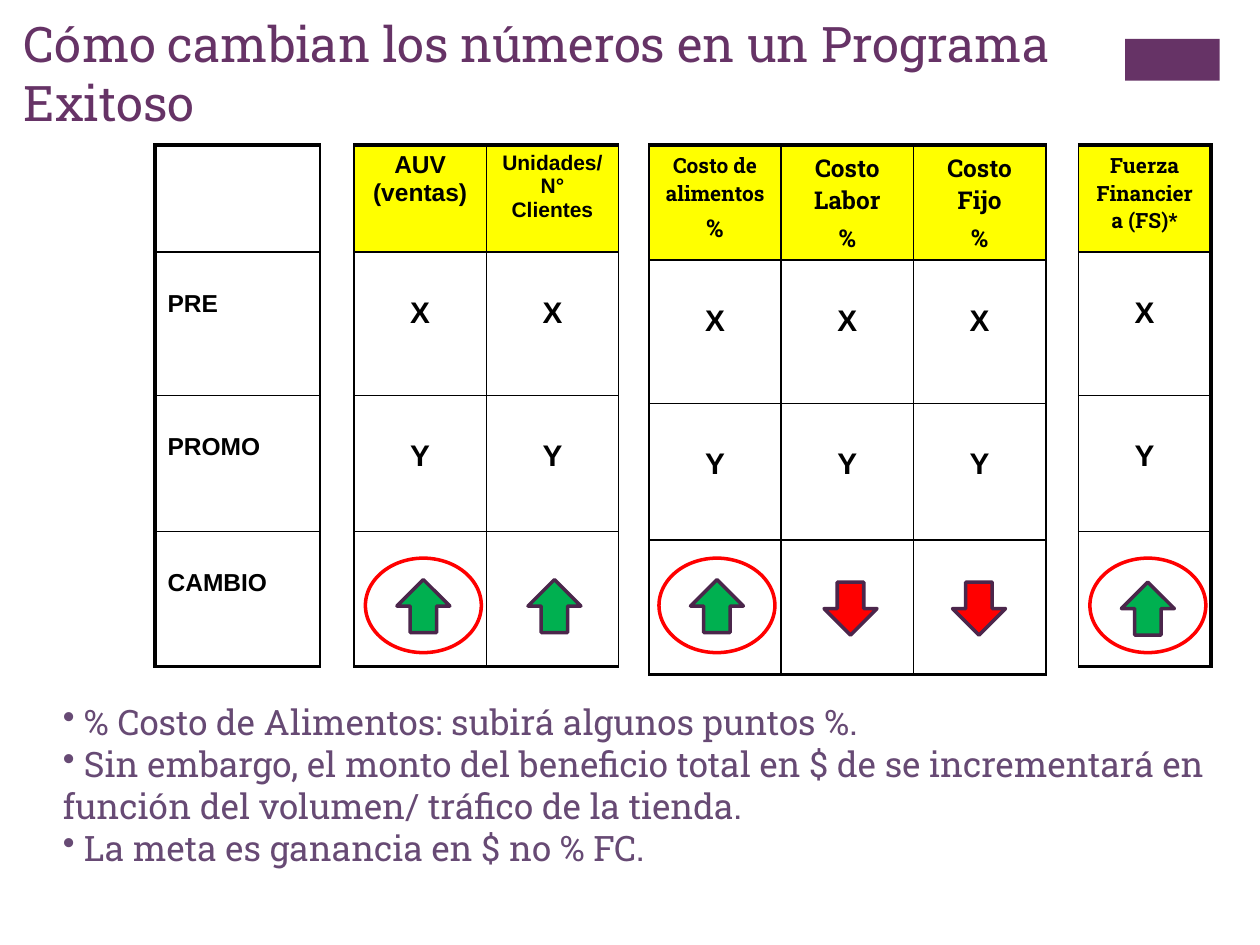
from lxml import etree
from pptx import Presentation
from pptx.dml.color import RGBColor
from pptx.enum.shapes import MSO_SHAPE
from pptx.enum.text import MSO_ANCHOR, MSO_AUTO_SIZE, PP_ALIGN
from pptx.oxml.ns import qn
from pptx.util import Inches, Pt

UP, DOWN = MSO_SHAPE.UP_ARROW, MSO_SHAPE.DOWN_ARROW
RECTANGLE, OVAL = MSO_SHAPE.RECTANGLE, MSO_SHAPE.OVAL
TOP, NO_FIT = MSO_ANCHOR.TOP, MSO_AUTO_SIZE.NONE
LEFT, CENTER = PP_ALIGN.LEFT, PP_ALIGN.CENTER
SANS, SLAB = "Arial", "Roboto Slab"

COLORS = {
    "title": "663366", "body": "674A74", "text": "000000", "header": "FFFF00",
    "rise": "00B050", "fall": "FF0000", "outline": "4B264B", "ring": "FF0000",
}

TITLE = "Cómo cambian los números en un Programa Exitoso"
BULLETS = [
    " % Costo de Alimentos: subirá algunos puntos %.",
    " Sin embargo, el monto del beneficio total en $ de se incrementará en "
    "función del volumen/ tráfico de la tienda.",
    " La meta es ganancia en $ no % FC.",
]
LABELS = ["PRE", "PROMO", "CAMBIO"]
VALUES = ["X", "Y", ""]
ROW_HEIGHTS = [0.85, 1.14, 1.08, 1.07]
TABLE_TOP, LABEL_WIDTH, VALUE_WIDTH = 1.15, 1.31, 1.05
THIN, THICK = 1, 2.25

LABEL_LEFT = 1.23
GROUPS = [
    (2.81, [([("AUV (ventas)", 14)], SANS, 0),
            ([("Unidades/", 12), ("N° Clientes", 12)], SANS, 0)]),
    (5.15, [([("Costo de alimentos", 12), ("%", 14)], SLAB, 2.8),
            ([("Costo Labor", 14), ("%", 14)], SLAB, 2.8),
            ([("Costo Fijo", 14), ("%", 14)], SLAB, 2.8)]),
    (8.56, [([("Fuerza Financiera (FS)*", 12)], SLAB, 0)]),
]

ARROW_SIZE = 0.42
ARROWS = [
    (UP, 3.15, 4.6, True), (UP, 4.19, 4.6, False), (UP, 5.48, 4.6, True),
    (DOWN, 6.54, 4.62, False), (DOWN, 7.56, 4.62, False), (UP, 8.9, 4.62, True),
]
RING_TOP, RING_WIDTH, RING_HEIGHT = 4.43, 0.92, 0.75


def color(name):
    return RGBColor.from_string(COLORS[name])


def style(paragraph, size, font, color_name, bold=False, align=LEFT):
    paragraph.alignment = align
    paragraph.font.size = Pt(size)
    paragraph.font.name = font
    paragraph.font.bold = bold
    paragraph.font.color.rgb = color(color_name)


def fill_paragraphs(frame, lines, font, color_name, bold, align, gap=0):
    for index, (text, size) in enumerate(lines):
        paragraph = frame.add_paragraph() if index else frame.paragraphs[0]
        paragraph.text = text
        style(paragraph, size, font, color_name, bold, align)
        paragraph.space_before = Pt(gap if index else 0)


def set_borders(cell, widths):
    properties = cell._tc.get_or_add_tcPr()
    for index, (side, width) in enumerate(zip("LRTB", widths)):
        line = etree.Element(qn(f"a:ln{side}"), w=str(Pt(width)))
        solid = etree.SubElement(line, qn("a:solidFill"))
        etree.SubElement(solid, qn("a:srgbClr"), val=COLORS["text"])
        properties.insert(index, line)


def add_grid(slide, left, column_width, columns, thick_left, thick_right):
    count, last_row = len(columns), len(ROW_HEIGHTS) - 1
    frame = slide.shapes.add_table(
        len(ROW_HEIGHTS), count, Inches(left), Inches(TABLE_TOP),
        Inches(column_width * count), Inches(sum(ROW_HEIGHTS)))
    table = frame.table
    table.first_row = table.horz_banding = False
    for row, height in zip(table.rows, ROW_HEIGHTS):
        row.height = Inches(height)
    for c, cells in enumerate(columns):
        table.columns[c].width = Inches(column_width)
        for r, (lines, font, gap, margin, align) in enumerate(cells):
            cell = table.cell(r, c)
            cell.margin_top = Inches(margin)
            fill_paragraphs(cell.text_frame, lines, font, "text", True, align, gap)
            if r == 0 and lines:
                cell.fill.solid()
                cell.fill.fore_color.rgb = color("header")
            else:
                cell.fill.background()
            heavy = (thick_left and c == 0, thick_right and c == count - 1,
                     r == 0, r == last_row)
            set_borders(cell, [THICK if side else THIN for side in heavy])


def add_shape(slide, kind, left, top, width, height, fill=None, line=None):
    shape = slide.shapes.add_shape(
        kind, Inches(left), Inches(top), Inches(width), Inches(height))
    shape.shadow.inherit = False
    if fill:
        shape.fill.solid()
        shape.fill.fore_color.rgb = color(fill)
    else:
        shape.fill.background()
    if line:
        shape.line.color.rgb = color(line)
        shape.line.width = Pt(2)
    else:
        shape.line.fill.background()


def main():
    deck = Presentation()
    deck.slide_width, deck.slide_height = Inches(10), Inches(7.5)
    slide = deck.slides.add_slide(deck.slide_layouts[5])

    title = slide.shapes.title
    title.left, title.top = Inches(0.09), Inches(0.06)
    title.width, title.height = Inches(8.49), Inches(1.22)
    title.text_frame.auto_size = NO_FIT
    title.text_frame.vertical_anchor = TOP
    fill_paragraphs(title.text_frame, [(TITLE, 28)], SLAB, "title", False, LEFT)

    add_shape(slide, RECTANGLE, 8.93, 0.31, 0.75, 0.33, "title")

    labels = [([], SANS, 0, 0.05, LEFT)]
    labels += [([(label, 14)], SANS, 0, 0.3, LEFT) for label in LABELS]
    add_grid(slide, LABEL_LEFT, LABEL_WIDTH, [labels], True, False)
    values = [([(value, 17)] if value else [], SANS, 0, 0.35, CENTER)
              for value in VALUES]
    for left, headers in GROUPS:
        columns = [[(lines, font, gap, 0.05, CENTER)] + values
                   for lines, font, gap in headers]
        add_grid(slide, left, VALUE_WIDTH, columns, False, left == GROUPS[-1][0])

    for kind, left, top, ringed in ARROWS:
        add_shape(slide, kind, left, top, ARROW_SIZE, ARROW_SIZE,
                  "rise" if kind == UP else "fall", "outline")
    for kind, left, top, ringed in ARROWS:
        if ringed:
            add_shape(slide, OVAL, left + (ARROW_SIZE - RING_WIDTH) / 2, RING_TOP,
                      RING_WIDTH, RING_HEIGHT, line="ring")

    box = slide.shapes.add_textbox(
        Inches(0.4), Inches(5.51), Inches(9.27), Inches(1.72))
    box.text_frame.word_wrap = True
    fill_paragraphs(box.text_frame, [(text, 20) for text in BULLETS],
                    SLAB, "body", False, LEFT)
    for paragraph in box.text_frame.paragraphs:
        properties = paragraph._p.get_or_add_pPr()
        bullet = etree.Element(qn("a:buChar"), char="•")
        properties.insert_element_before(bullet, "a:tabLst", "a:defRPr", "a:extLst")

    deck.save("out.pptx")


if __name__ == "__main__":
    main()
